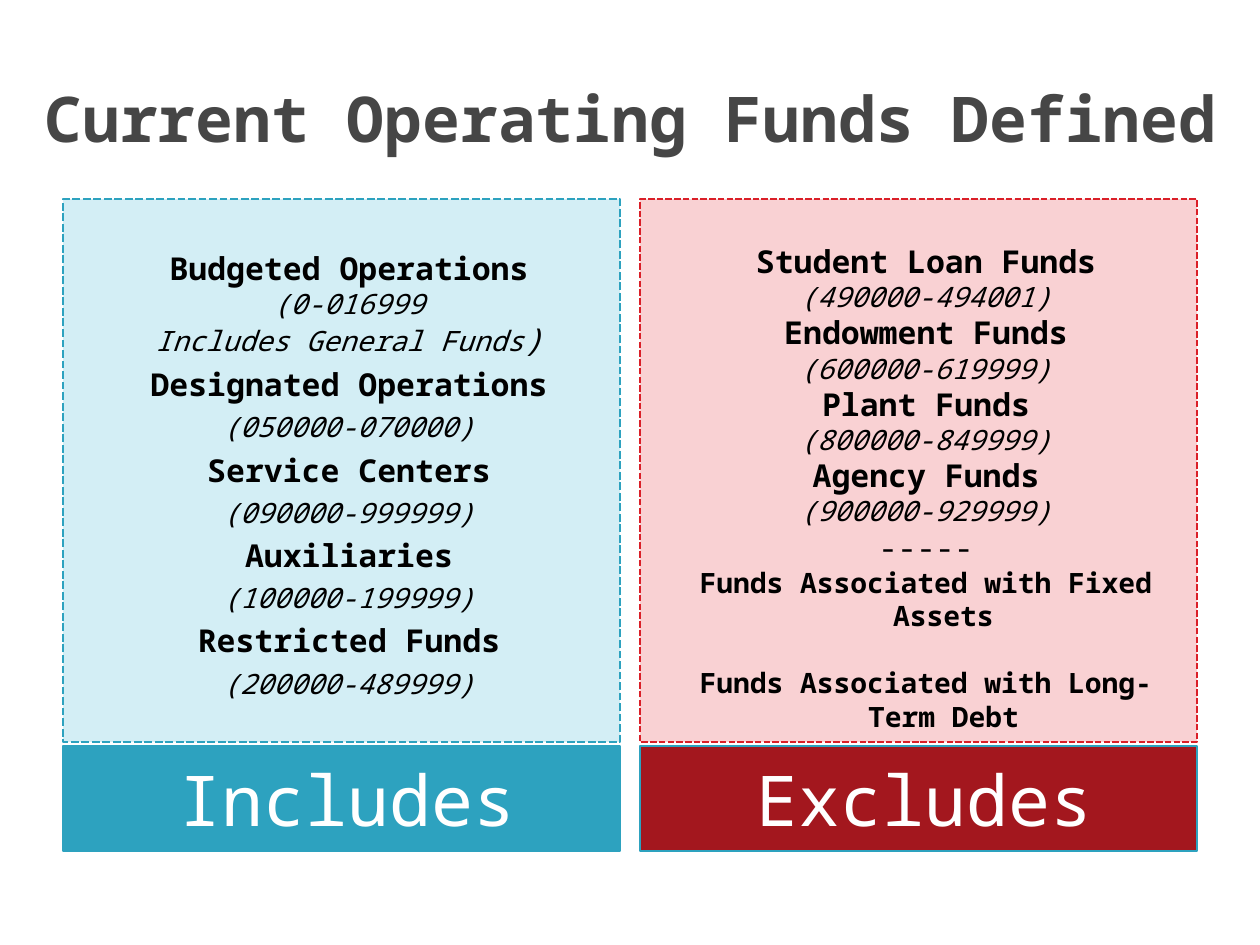
from dataclasses import dataclass

from lxml.etree import SubElement
from pptx import Presentation
from pptx.dml.color import RGBColor
from pptx.enum.dml import MSO_LINE
from pptx.enum.text import MSO_ANCHOR, MSO_AUTO_SIZE, PP_ALIGN
from pptx.oxml.ns import qn
from pptx.util import Emu, Pt

SCALE = 914400 / 126  # EMU per px


@dataclass(frozen=True)
class Theme:
    font: str = "Noto Sans Mono"
    title: str = "464646"
    text: str = "000000"
    light: str = "FFFFFF"
    teal: str = "2DA2BF"
    pale_teal: str = "D3EEF5"
    red: str = "DA1F28"
    dark_red: str = "A3171E"
    pale_red: str = "F9D1D3"
    title_size: int = 36
    label_size: int = 40
    name_size: int = 18
    code_size: int = 16


THEME = Theme()

# Text formats used inside the two panels
NAME = {"size": Pt(THEME.name_size), "bold": True, "italic": False}
CODE = {"size": Pt(THEME.code_size), "bold": False, "italic": True}
CLOSE = {**CODE, "size": Pt(THEME.name_size)}
RULE = {**NAME, "bold": False}
NOTE = {**CODE, "bold": True, "italic": False}

# Each line: space before in points, then (text, format) runs
INCLUDED = [
    (0, [("Budgeted Operations", NAME)]),
    (0, [("(0-016999", CODE)]),
    (0, [("Includes General Funds", CODE), (")", CLOSE)]),
    (4, [("Designated Operations", NAME)]),
    (4, [("(050000-070000)", CODE)]),
    (4, [("Service Centers", NAME)]),
    (4, [("(090000-999999)", CODE)]),
    (4, [("Auxiliaries", NAME)]),
    (4, [("(100000-199999)", CODE)]),
    (4, [("Restricted Funds", NAME)]),
    (4, [("(200000-489999)", CODE)]),
]
EXCLUDED = [
    (0, [("Student Loan Funds", NAME)]),
    (0, [("(490000-494001)", CODE)]),
    (0, [("Endowment Funds", NAME)]),
    (0, [("(600000-619999)", CODE)]),
    (0, [("Plant Funds", NAME)]),
    (0, [("(800000-849999)", CODE)]),
    (0, [("Agency Funds", NAME)]),
    (0, [("(900000-929999)", CODE)]),
    (0, [("-----", RULE)]),
    (0, [("Funds Associated with Fixed Assets", NOTE)]),
    (19, [("Funds Associated with Long-Term Debt", NOTE)]),
]


def px(length):
    return Emu(round(length * SCALE))


def apply(target, values):
    for name, value in values.items():
        setattr(target, name, value)


def place(shape, left, top, width, height):
    apply(shape, {"left": px(left), "top": px(top),
                  "width": px(width), "height": px(height)})


def set_frame(shape, anchor, **margins):
    frame = shape.text_frame
    apply(frame, {"word_wrap": True, "auto_size": MSO_AUTO_SIZE.NONE,
                  "vertical_anchor": anchor})
    apply(frame, {f"margin_{side}": px(value) for side, value in margins.items()})
    return frame


def paint(shape, fill, line, width, dash=None):
    shape.fill.solid()
    shape.fill.fore_color.rgb = RGBColor.from_string(fill)
    shape.line.color.rgb = RGBColor.from_string(line)
    apply(shape.line, {"width": Pt(width), "dash_style": dash})


def write_line(paragraph, runs, color, space=0, indent=(0, 0)):
    properties = paragraph._p.get_or_add_pPr()
    properties.set("marL", str(px(indent[0])))
    properties.set("indent", str(px(indent[1])))
    SubElement(properties, qn("a:buNone"))
    apply(paragraph, {"alignment": PP_ALIGN.CENTER, "space_before": Pt(space)})
    for text, values in runs:
        run = paragraph.add_run()
        run.text = text
        apply(run.font, {"name": THEME.font, **values})
        run.font.color.rgb = RGBColor.from_string(color)


def add_title(shape, text):
    place(shape, 32, 38, 1197, 158)
    frame = set_frame(shape, MSO_ANCHOR.MIDDLE, left=0, right=0)
    write_line(frame.paragraphs[0],
               [(text, {"size": Pt(THEME.title_size), "bold": True})], THEME.title)


def add_label(shape, left, text, fill):
    place(shape, left, 746, 557, 105)
    paint(shape, fill, THEME.teal, 0.75)
    frame = set_frame(shape, MSO_ANCHOR.MIDDLE, left=25, right=13, top=6, bottom=6)
    write_line(frame.paragraphs[0],
               [(text, {"size": Pt(THEME.label_size), "bold": False})], THEME.light)


def add_panel(shape, left, lines, fill, line, width, top_margin):
    place(shape, left, 199, 557, 543)
    paint(shape, fill, line, width, MSO_LINE.SQUARE_DOT)
    # python-pptx names the sysDash pattern SQUARE_DOT's neighbour, so set it directly
    shape.line._ln.find(qn("a:prstDash")).set("val", "sysDash")
    frame = set_frame(shape, MSO_ANCHOR.TOP, left=13, right=13, top=top_margin, bottom=6)
    for index, (space, runs) in enumerate(lines):
        paragraph = frame.add_paragraph() if index else frame.paragraphs[0]
        write_line(paragraph, runs, THEME.text, space, indent=(50, -35))


def main():
    presentation = Presentation()
    apply(presentation, {"slide_width": px(1260), "slide_height": px(945)})

    # Comparison layout: title, then a label and a panel for each side
    slide = presentation.slides.add_slide(presentation.slide_layouts[4])
    title, *sides = [slide.placeholders[index] for index in range(5)]
    left_label, left_panel, right_label, right_panel = sides
    add_title(title, "Current Operating Funds Defined")

    # Left column
    add_label(left_label, 63, "Includes", THEME.teal)
    add_panel(left_panel, 63, INCLUDED, THEME.pale_teal, THEME.teal, 1.5, 50)

    # Right column
    add_label(right_label, 640, "Excludes", THEME.dark_red)
    add_panel(right_panel, 640, EXCLUDED, THEME.pale_red, THEME.red, 1.25, 43)

    presentation.save("out.pptx")


if __name__ == "__main__":
    main()
